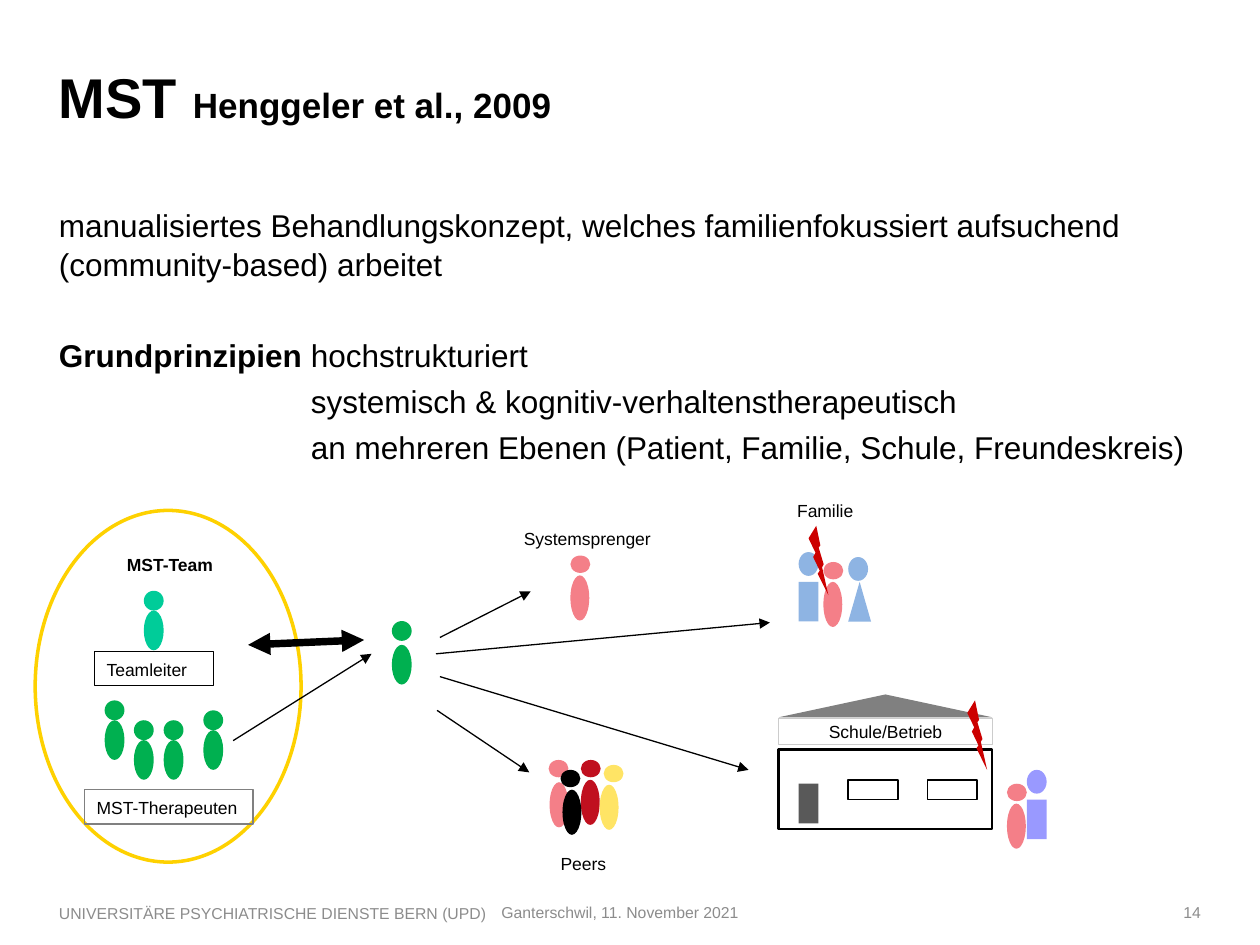
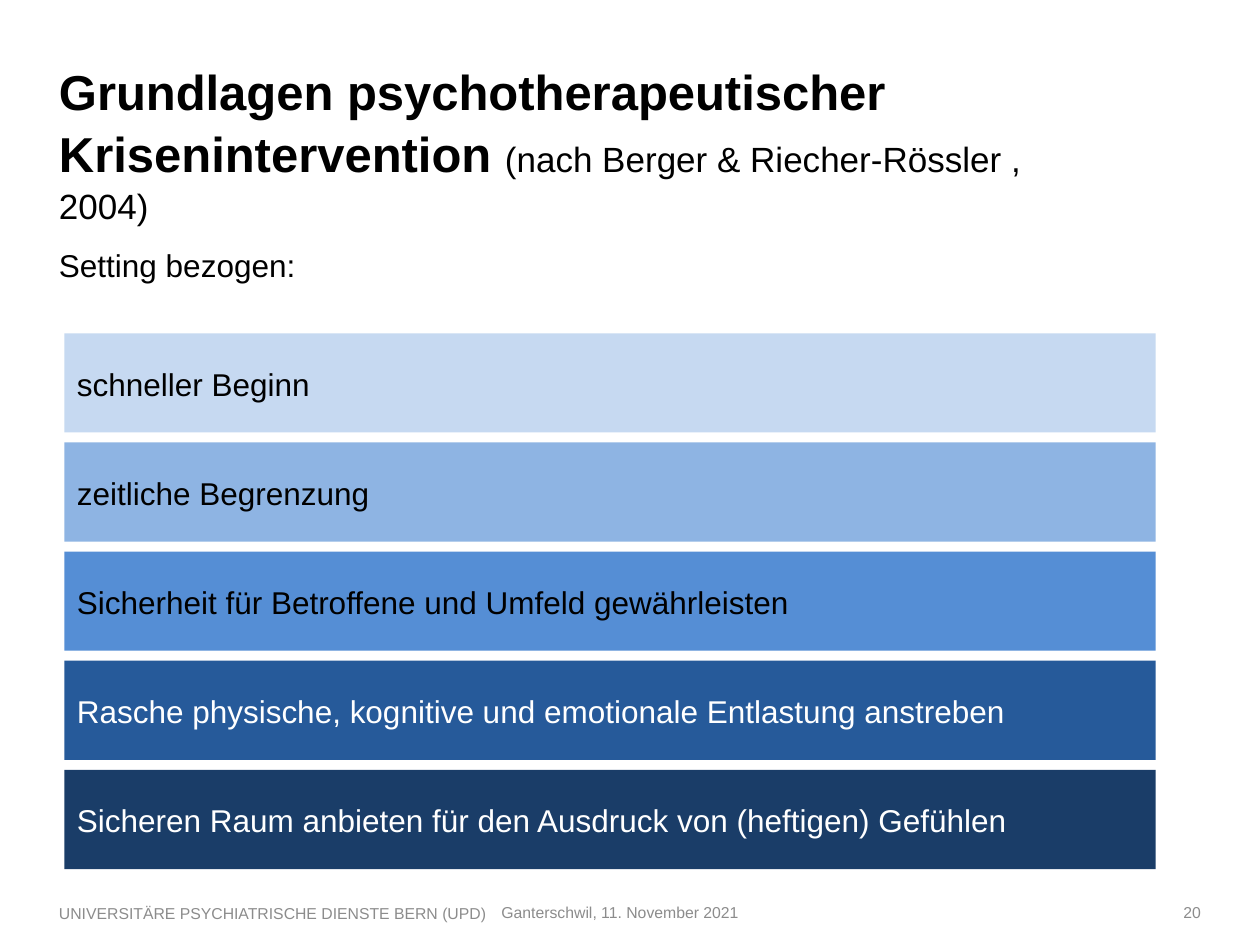
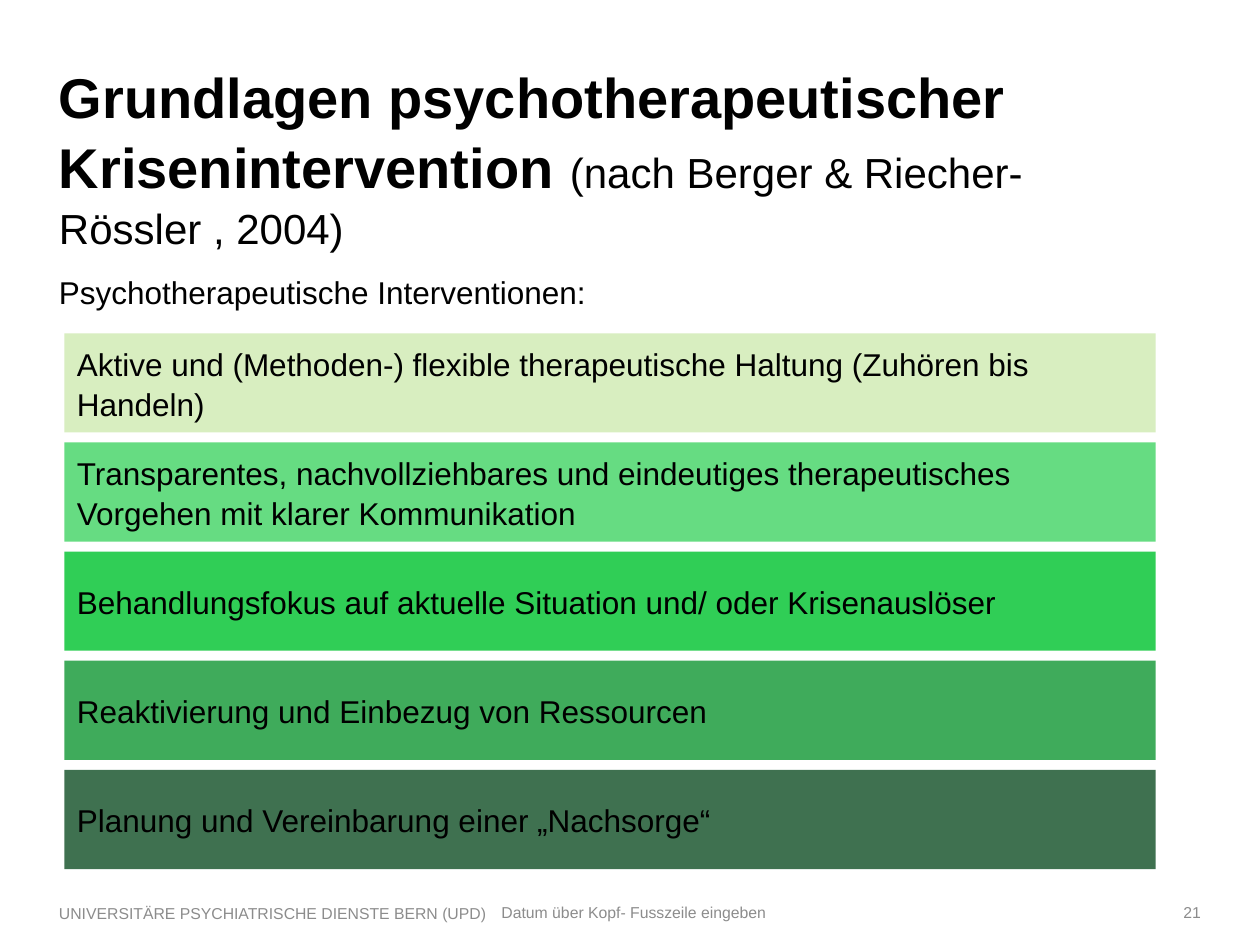
from pptx import Presentation
from pptx.dml.color import RGBColor
from pptx.enum.shapes import MSO_CONNECTOR, MSO_SHAPE as Shape
from pptx.enum.text import MSO_ANCHOR as Anchor, PP_ALIGN as Align
from pptx.oxml.ns import qn
from pptx.util import Cm, Pt
from lxml import etree

FONT = "Arial"
BLACK, WHITE, GREY = "000000", "FFFFFF", "8C8C8C"
GREEN, TEAL, PINK, BLUE, VIOLET = "00B050", "00CC99", "F47F88", "8EB4E3", "9999FF"
RED, CRIMSON, YELLOW, GOLD = "CC0000", "C0101F", "FFE465", "FED100"
MARGIN = 1.19
LINE_SPACING = 1.05
AUTHORS = "(nach Berger & Riecher-Rössler , 2004)"
BASICS = "Grundlagen psychotherapeutischer Krisenintervention "
PLACE_DATE = "Ganterschwil, 11. November 2021"


def colour(hex_code):
    return RGBColor.from_string(hex_code)


def style(font, size, hex_code=BLACK, bold=False):
    font.name = FONT
    font.size = Pt(size)
    font.bold = bold
    font.color.rgb = colour(hex_code)


def set_margins(frame, horizontal, vertical):
    frame.margin_left = frame.margin_right = Cm(horizontal)
    frame.margin_top = frame.margin_bottom = Cm(vertical)


def fill_frame(frame, text, size, hex_code=BLACK, bold=False, align=Align.LEFT):
    frame.word_wrap = True
    frame.text = text
    for para in frame.paragraphs:
        para.alignment = align
        para.line_spacing = LINE_SPACING
        for span in para.runs:
            style(span.font, size, hex_code, bold)


def add_box(page, left, top, width, height, horizontal=0, vertical=0):
    box = page.shapes.add_textbox(Cm(left), Cm(top), Cm(width), Cm(height))
    box.text_frame.word_wrap = True
    set_margins(box.text_frame, horizontal, vertical)
    return box.text_frame


def add_spans(para, spans):
    para.line_spacing = LINE_SPACING
    for text, size, bold in spans:
        span = para.add_run()
        span.text = text
        style(span.font, size, bold=bold)


def add_figure(page, kind, left, top, width, height, fill=None, line=None, weight=0.75):
    figure = page.shapes.add_shape(kind, Cm(left), Cm(top), Cm(width), Cm(height))
    figure.shadow.inherit = False
    if fill:
        figure.fill.solid()
        figure.fill.fore_color.rgb = colour(fill)
    else:
        figure.fill.background()
    if line:
        figure.line.color.rgb = colour(line)
        figure.line.width = Pt(weight)
    else:
        figure.line.fill.background()
    return figure


def add_title(page, height, spans):
    frame = add_box(page, MARGIN, MARGIN, 19.5, height)
    add_spans(frame.paragraphs[0], spans)


def add_footer(page, middle_text, number):
    for left, top, width, height, text, align in (
        (MARGIN, 17.88, 8.92, 1.04, "UNIVERSITÄRE PSYCHIATRISCHE DIENSTE BERN (UPD)", Align.LEFT),
        (10.11, 18.06, 7.14, 0.66, middle_text, Align.LEFT),
        (21.21, 18.06, 3, 0.66, str(number), Align.RIGHT),
    ):
        frame = add_box(page, left, top, width, height, 0, 0.13)
        frame.vertical_anchor = Anchor.MIDDLE
        fill_frame(frame, text, 9, GREY, align=align)
        frame.paragraphs[0].line_spacing = 1


def add_label(page, left, top, width, text, bold=False):
    frame = add_box(page, left, top, width, 0.69, 0.25, 0.13)
    fill_frame(frame, text, 10, bold=bold)


def add_framed_label(page, left, top, width, text, line):
    frame = add_figure(page, Shape.RECTANGLE, left, top, width, 0.69, line=line).text_frame
    frame.vertical_anchor = Anchor.TOP
    fill_frame(frame, text, 10)


def add_person(page, left, top, fill, head=(0.4, 0.4), body=(0.4, 0.8), drop=0.4, shift=0):
    add_figure(page, Shape.OVAL, left, top, *head, fill)
    add_figure(page, Shape.OVAL, left + shift, top + drop, *body, fill)


def add_youth(page, left, top, fill=PINK, drop=0.4, shift=0):
    add_person(page, left, top, fill, (0.4, 0.35), (0.38, 0.91), drop, shift)


def add_adult(page, left, top, fill, body=Shape.RECTANGLE, width=0.4, drop=0.6):
    add_figure(page, Shape.FLOWCHART_CONNECTOR, left, top, 0.4, 0.48, fill)
    add_figure(page, body, left, top + drop, width, 0.8, fill)


def add_bolt(page, left, top):
    add_figure(page, Shape.LIGHTNING_BOLT, left, top, 0.4, 1.4, RED)


def add_arrow(page, start, end, weight=0.75, ends=("tailEnd",)):
    points = [Cm(value) for value in (*start, *end)]
    arrow = page.shapes.add_connector(MSO_CONNECTOR.STRAIGHT, *points)
    arrow.line.color.rgb = colour(BLACK)
    arrow.line.width = Pt(weight)
    line = arrow.line._get_or_add_ln()
    for name in ends:
        etree.SubElement(line, qn("a:" + name), type="triangle")
    etree.SubElement(arrow._element.spPr, qn("a:effectLst"))


def add_school(page):
    left, width = 15.7, 4.3
    add_figure(page, Shape.RECTANGLE, left, 15.11, width, 1.6, WHITE, BLACK, 1.5)
    add_figure(page, Shape.RECTANGLE, 16.1, 15.8, 0.4, 0.8, "595959")
    sign = add_figure(page, Shape.RECTANGLE, left, 14.48, width, 0.53, WHITE, "CCCCCC", 0.5)
    sign.text_frame.vertical_anchor = Anchor.MIDDLE
    fill_frame(sign.text_frame, "Schule/Betrieb", 10, align=Align.CENTER)
    for window_left in (17.1, 18.7):
        add_figure(page, Shape.RECTANGLE, window_left, 15.72, 1, 0.4, WHITE, BLACK, 1)
    add_figure(page, Shape.ISOSCELES_TRIANGLE, left, 14, width, 0.46, "808080")


def add_team(page):
    add_label(page, 2.31, 11.02, 2.4, "MST-Team", True)
    add_person(page, 2.9, 11.91, TEAL)
    for left, top in ((2.11, 14.12), (2.7, 14.52), (3.3, 14.52), (4.1, 14.32)):
        add_person(page, left, top, GREEN)
    add_framed_label(page, 1.9, 13.13, 2.4, "Teamleiter", BLACK)
    add_framed_label(page, 1.7, 15.92, 3.4, "MST-Therapeuten", "808080")


def add_principles(page):
    frame = add_box(page, MARGIN, 4.11, 22.94, 13.94)
    paragraphs = (
        (0, 0, [("manualisiertes Behandlungskonzept, welches familienfokussiert "
                 "aufsuchend (community-based) arbeitet", 18, False)]),
        (29, 0, [("Grundprinzipien", 18, True), (" hochstrukturiert", 18, False)]),
        (3.6, 5.08, [("systemisch & kognitiv-verhaltenstherapeutisch", 18, False)]),
        (3.6, 5.08, [("an mehreren Ebenen (Patient, Familie, Schule, Freundeskreis)", 18, False)]),
    )
    for index, (before, indent, spans) in enumerate(paragraphs):
        para = frame.add_paragraph() if index else frame.paragraphs[0]
        para.space_before = Pt(before)
        para._p.get_or_add_pPr().set("marL", str(Cm(indent)))
        add_spans(para, spans)


def build_mst(page):
    add_figure(page, Shape.OVAL, 0.71, 10.29, 5.36, 7.09, WHITE, GOLD, 2)
    add_title(page, 1.73, [("MST ", 32, True), ("Henggeler et al., 2009", 20, True)])
    add_principles(page)
    add_footer(page, PLACE_DATE, 14)
    add_team(page)
    add_person(page, 7.9, 12.52, GREEN, drop=0.48)

    add_label(page, 10.31, 10.49, 3.2, "Systemsprenger")
    add_youth(page, 11.5, 11.2)

    add_label(page, 15.82, 9.93, 1.7, "Familie")
    add_adult(page, 16.1, 11.13, BLUE)
    add_youth(page, 16.6, 11.33)
    add_adult(page, 17.1, 11.23, BLUE, Shape.FLOWCHART_EXTRACT, 0.46, 0.5)
    add_bolt(page, 16.3, 10.6)

    add_school(page)
    add_adult(page, 20.7, 15.52, VIOLET)
    add_youth(page, 20.3, 15.8)
    add_bolt(page, 19.5, 14.12)

    for left, top, fill, drop, shift in (
        (11.71, 15.32, CRIMSON, 0.4, 0),
        (11.06, 15.32, PINK, 0.45, 0.02),
        (12.17, 15.42, YELLOW, 0.4, -0.08),
        (11.3, 15.52, BLACK, 0.4, 0.04),
    ):
        add_youth(page, left, top, fill, drop, shift)
    add_label(page, 11.05, 17.04, 1.7, "Peers")

    for start, end in (
        ((4.7, 14.93), (7.49, 13.18)),
        ((8.79, 13.18), (15.52, 12.55)),
        ((8.87, 12.85), (10.7, 11.92)),
        ((8.87, 13.64), (15.09, 15.52)),
        ((8.81, 14.32), (10.67, 15.57)),
    ):
        add_arrow(page, start, end)
    add_arrow(page, (5, 13), (7.34, 12.9), 4.25, ("headEnd", "tailEnd"))


def build_bars(page, title_sizes, title_height, intro_top, intro, bars, footer, number):
    main_size, source_size = title_sizes
    add_title(page, title_height, [(BASICS, main_size, True), (AUTHORS, source_size, False)])
    fill_frame(add_box(page, MARGIN, intro_top, 22.94, 1), intro, 18)
    add_footer(page, footer, number)
    for index, (text, fill, text_colour) in enumerate(bars):
        bar = add_figure(page, Shape.RECTANGLE, 1.3, 6.72 + 2.2 * index, 22, 2, fill)
        bar.text_frame.vertical_anchor = Anchor.MIDDLE
        fill_frame(bar.text_frame, text, 18, text_colour)


def main():
    deck = Presentation()
    deck.slide_width, deck.slide_height = Cm(25.4), Cm(19.05)
    mst, setting, therapy = (deck.slides.add_slide(deck.slide_layouts[6]) for _ in range(3))

    build_mst(mst)
    build_bars(setting, (28, 20), 3.18, 4.93, "Setting bezogen:", (
        ("schneller Beginn", "C6D9F1", BLACK),
        ("zeitliche Begrenzung", "8EB4E3", BLACK),
        ("Sicherheit für Betroffene und Umfeld gewährleisten", "558ED5", BLACK),
        ("Rasche physische, kognitive und emotionale Entlastung anstreben", "265A9A", WHITE),
        ("Sicheren Raum anbieten für den Ausdruck von (heftigen) Gefühlen", "1A3D68", WHITE),
    ), PLACE_DATE, 20)
    build_bars(therapy, (32, 24), 3.73, 5.46, "Psychotherapeutische Interventionen:", (
        ("Aktive und (Methoden-) flexible therapeutische Haltung (Zuhören bis\nHandeln)",
         "D8EEC0", BLACK),
        ("Transparentes, nachvollziehbares und eindeutiges therapeutisches\n"
         "Vorgehen mit klarer Kommunikation", "66DC82", BLACK),
        ("Behandlungsfokus auf aktuelle Situation und/ oder Krisenauslöser", "30CE56", BLACK),
        ("Reaktivierung und Einbezug von Ressourcen", "3FAB5B", BLACK),
        ("Planung und Vereinbarung einer „Nachsorge“", "3F7150", BLACK),
    ), "Datum über Kopf- Fusszeile eingeben", 21)
    deck.save("out.pptx")


if __name__ == "__main__":
    main()
